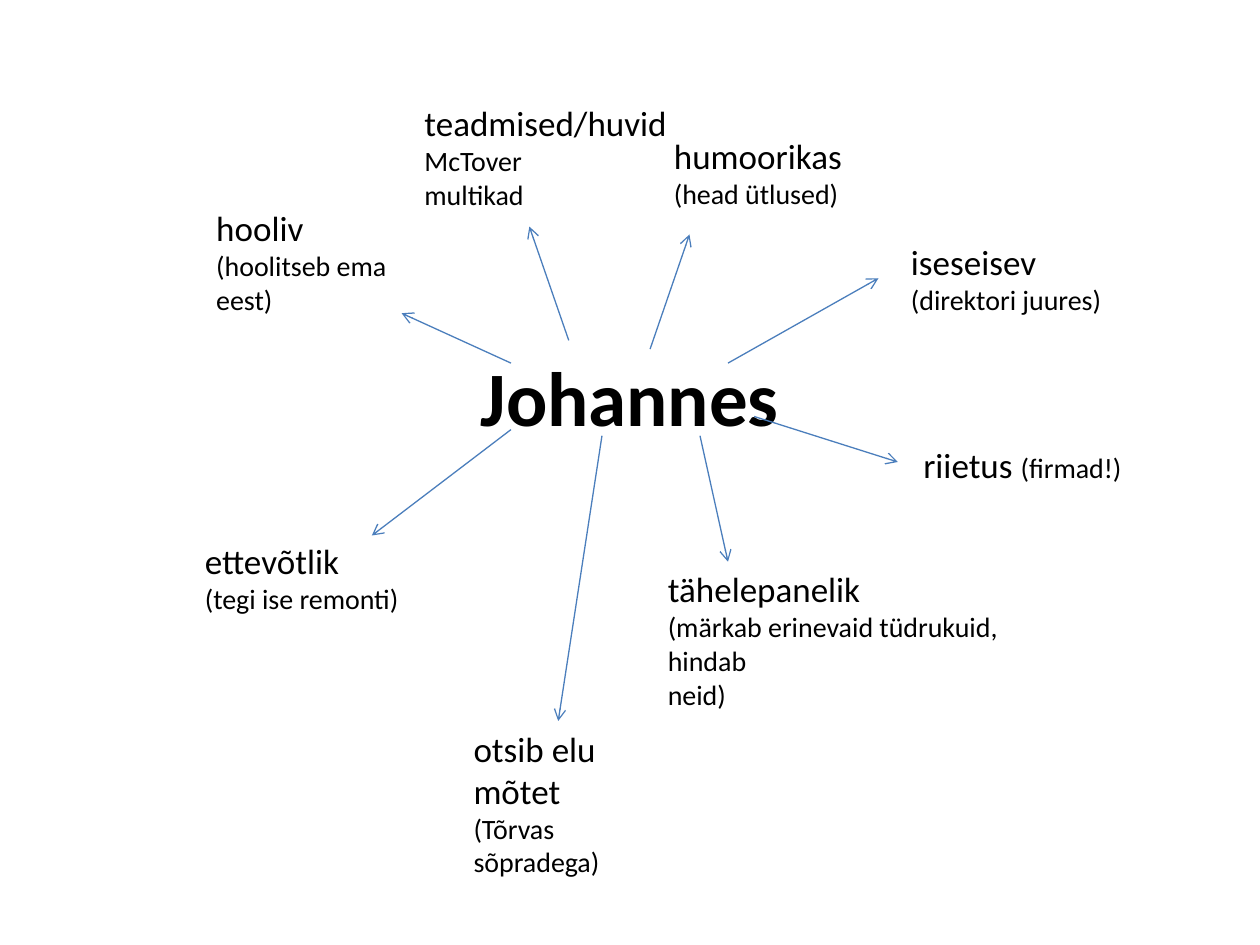
import pptx
import pptx.dml.color
import pptx.enum.shapes
import pptx.enum.text
import pptx.oxml.ns
import pptx.util
from lxml import etree

Pt = pptx.util.Pt
Anchor = pptx.enum.text.MSO_ANCHOR
Align = pptx.enum.text.PP_ALIGN


def colour(hex_code):
    return pptx.dml.color.RGBColor.from_string(hex_code)


class MindMap:
    typeface = "Calibri"
    ink = "000000"
    arrow_ink = "4B7EBC"
    trait_size = 20
    detail_size = 16

    def __init__(self, slide):
        self.slide = slide

    def style(self, font, size, bold=False):
        font.name = self.typeface
        font.size = Pt(size)
        font.bold = bold
        font.color.rgb = colour(self.ink)

    def frame(self, box, wrap=True, anchor=Anchor.TOP):
        text_frame = self.slide.shapes.add_textbox(*map(Pt, box)).text_frame
        text_frame.word_wrap = wrap
        text_frame.vertical_anchor = anchor
        return text_frame

    def centre(self, box, name):
        paragraph = self.frame(box, anchor=Anchor.MIDDLE).paragraphs[0]
        paragraph.text = name
        paragraph.alignment = Align.CENTER
        self.style(paragraph.font, 44, bold=True)

    def trait(self, box, trait, details, wrap=True):
        """A trait with its details on separate lines."""
        text_frame = self.frame(box, wrap)
        text_frame.text = "\n".join([trait, *details])
        for index, paragraph in enumerate(text_frame.paragraphs):
            self.style(paragraph.font, self.detail_size if index else self.trait_size)

    def inline_trait(self, box, trait, detail):
        """A trait with its detail running on in the same paragraph."""
        paragraph = self.frame(box).paragraphs[0]
        for text, size in ((trait + " ", self.trait_size), (detail, self.detail_size)):
            run = paragraph.add_run()
            run.text = text
            self.style(run.font, size)

    def arrow(self, *ends):
        connector = self.slide.shapes.add_connector(
            pptx.enum.shapes.MSO_CONNECTOR.STRAIGHT, *map(Pt, ends))
        connector.line.color.rgb = colour(self.arrow_ink)
        connector.line.width = Pt(0.75)
        qn = pptx.oxml.ns.qn
        etree.SubElement(connector.line._get_or_add_ln(), qn("a:tailEnd"), type="arrow")
        etree.SubElement(connector._element.spPr, qn("a:effectLst"))


def main():
    presentation = pptx.Presentation()
    presentation.slide_width = Pt(720)
    presentation.slide_height = Pt(540)
    mind_map = MindMap(presentation.slides.add_slide(presentation.slide_layouts[6]))

    # Person in the centre
    mind_map.centre((54, 168, 612, 116), "Johannes")

    # Arrows out to the traits, clockwise from the right
    for ends in (
        (431, 238, 513, 264),
        (400, 249, 416, 321),
        (344, 249, 319, 412),
        (292, 245.5, 212.5, 306),
        (292, 207.5, 229.5, 179),
        (325, 194.5, 302.5, 129.5),
        (371.5, 199.5, 394, 134),
        (416, 207.5, 502, 159),
    ):
        mind_map.arrow(*ends)

    # Traits with the detail in the same paragraph
    mind_map.inline_trait((520.5, 250, 187, 31.5), "riietus", "(firmad!)")
    mind_map.inline_trait((263.5, 412, 110, 94.5), "otsib elu mõtet", "(Tõrvas sõpradega)")

    # Traits below the name
    mind_map.trait((374.5, 321, 218, 90), "tähelepanelik",
                   ["(märkab erinevaid tüdrukuid, hindab", "neid)"])
    mind_map.trait((110, 304.5, 163.5, 51), "ettevõtlik", ["(tegi ise remonti)"])

    # Traits above the name
    for box, trait, details in (
        ((116.5, 114.5, 113, 70.5), "hooliv", ["(hoolitseb ema", "eest)"]),
        ((235.5, 54.5, 155, 70.5), "teadmised/huvid", ["McTover", "multikad"]),
        ((378, 73.5, 111.5, 51), "humoorikas", ["(head ütlused)"]),
        ((513.5, 134, 124.5, 51), "iseseisev", ["(direktori juures)"]),
    ):
        mind_map.trait(box, trait, details, wrap=False)

    presentation.save("out.pptx")


if __name__ == "__main__":
    main()
